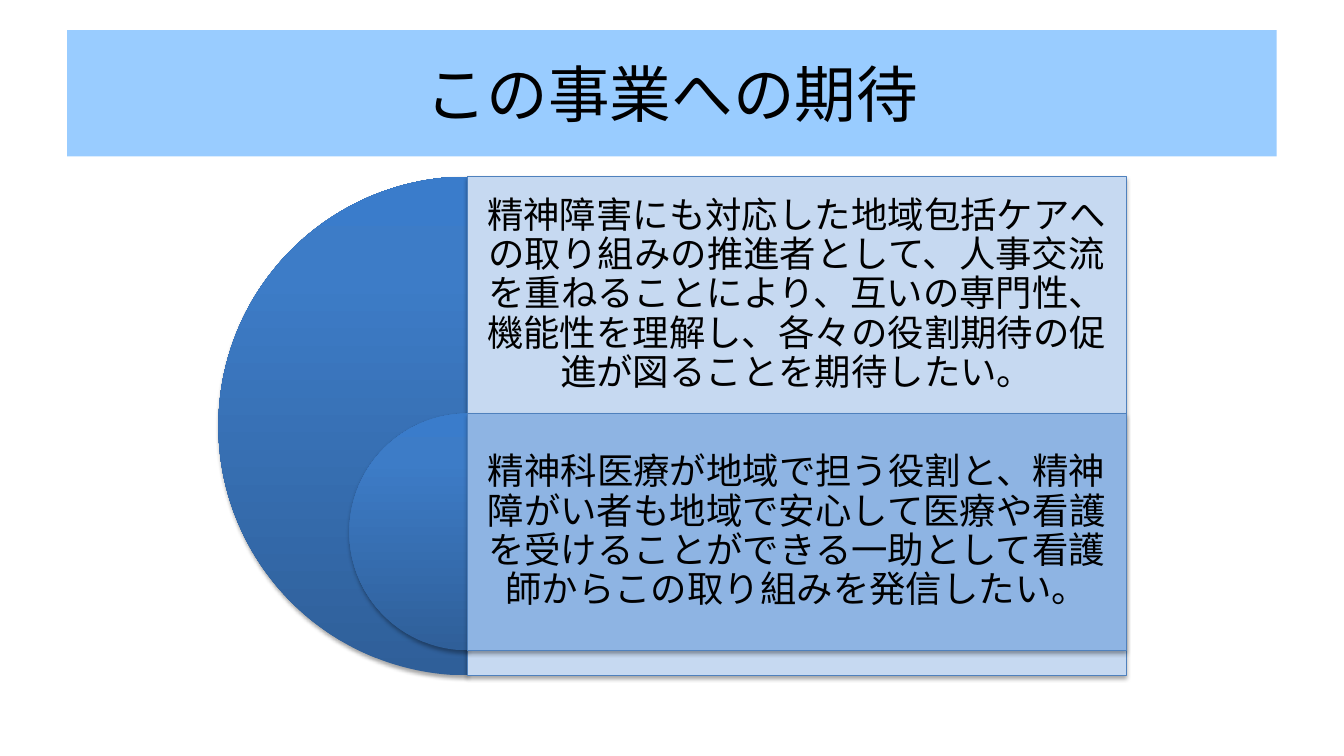
import copy

import lxml.etree
import pptx
import pptx.dml.color
import pptx.enum.shapes
import pptx.enum.text
import pptx.oxml.ns
import pptx.util

Cm = pptx.util.Cm
Pt = pptx.util.Pt
RGBColor = pptx.dml.color.RGBColor
MSO_SHAPE = pptx.enum.shapes.MSO_SHAPE
qn = pptx.oxml.ns.qn

BLACK = RGBColor(0x00, 0x00, 0x00)
TITLE_BLUE = RGBColor(0x99, 0xCC, 0xFF)
PALE_BLUE = RGBColor(0xC6, 0xD9, 0xF1)
MID_BLUE = RGBColor(0x8E, 0xB4, 0xE3)
EDGE_BLUE = RGBColor(0x4F, 0x81, 0xBD)
DISC_STOPS = [
    (0, RGBColor(0x2F, 0x5F, 0x99)),
    (0.8, RGBColor(0x3D, 0x7C, 0xC7)),
    (1, RGBColor(0x3A, 0x7C, 0xCB)),
]
FONT = "Noto Sans CJK JP"

TITLE = "この事業への期待"
# Diameter of the half disc (cm), panel colour, text
EXPECTATIONS = [
    (12.57, PALE_BLUE,
     "精神障害にも対応した地域包括ケアへの取り組みの推進者として、人事交流を重ねることにより、"
     "互いの専門性、機能性を理解し、各々の役割期待の促進が図ることを期待したい。"),
    (5.97, MID_BLUE,
     "精神科医療が地域で担う役割と、精神障がい者も地域で安心して医療や看護を受けることができる"
     "一助として看護師からこの取り組みを発信したい。"),
]

PANEL_LEFT, PANEL_WIDTH = 11.79, 16.59
FIRST_TOP, ROW_HEIGHT = 4.45, 5.97
TEXT_INSET = Cm(0.28)


def write_centred(frame, text, size):
    frame.word_wrap = True
    frame.vertical_anchor = pptx.enum.text.MSO_ANCHOR.MIDDLE
    para = frame.paragraphs[0]
    para.alignment = pptx.enum.text.PP_ALIGN.CENTER
    span = para.add_run()
    span.text = text
    span.font.size = Pt(size)
    span.font.color.rgb = BLACK
    span.font.name = FONT
    latin = span.font._element.find(qn("a:latin"))
    east_asian = lxml.etree.Element(qn("a:ea"), typeface=FONT)
    latin.addnext(east_asian)
    return para


def add_soft_shadow(shape):
    shape.shadow.inherit = False
    effects = shape._element.spPr.find(qn("a:effectLst"))
    shadow = lxml.etree.SubElement(
        effects, qn("a:outerShdw"), blurRad=str(Pt(3.1)), dist=str(Pt(1.8)),
        dir="5400000", rotWithShape="0")
    colour = lxml.etree.SubElement(shadow, qn("a:srgbClr"), val=str(BLACK))
    lxml.etree.SubElement(colour, qn("a:alpha"), val="35000")


def add_half_disc(page, top, diameter):
    disc = page.shapes.add_shape(
        MSO_SHAPE.PIE, Cm(PANEL_LEFT - diameter / 2), Cm(top),
        Cm(diameter), Cm(diameter))
    # Left half: from 90 to 270 degrees
    disc.adjustments[0] = 54
    disc.adjustments[1] = 162
    disc.line.fill.background()
    disc.fill.gradient()
    disc.fill.gradient_angle = 90
    stop_list = disc._element.spPr.find(qn("a:gradFill")).find(qn("a:gsLst"))
    stop_list.append(copy.deepcopy(stop_list[-1]))
    for stop, (position, colour) in zip(disc.fill.gradient_stops, DISC_STOPS):
        stop.position = position
        stop.color.rgb = colour
    add_soft_shadow(disc)


def add_panel(page, top, height, colour):
    panel = page.shapes.add_shape(
        MSO_SHAPE.RECTANGLE, Cm(PANEL_LEFT), Cm(top), Cm(PANEL_WIDTH), Cm(height))
    panel.fill.solid()
    panel.fill.fore_color.rgb = colour
    panel.line.color.rgb = EDGE_BLUE
    panel.line.width = Pt(0.75)
    add_soft_shadow(panel)


def add_panel_text(page, top, text):
    box = page.shapes.add_textbox(
        Cm(PANEL_LEFT), Cm(top), Cm(PANEL_WIDTH), Cm(ROW_HEIGHT))
    frame = box.text_frame
    frame.margin_left = frame.margin_right = TEXT_INSET
    frame.margin_top = frame.margin_bottom = TEXT_INSET
    write_centred(frame, text, 26).line_spacing = 0.9


def main():
    deck = pptx.Presentation()
    deck.slide_width, deck.slide_height = Cm(33.87), Cm(19.05)
    page = deck.slides.add_slide(deck.slide_layouts[5])

    title = page.shapes.title
    title.left, title.top = Cm(1.69), Cm(0.76)
    title.width, title.height = Cm(30.48), Cm(3.18)
    title.fill.solid()
    title.fill.fore_color.rgb = TITLE_BLUE
    write_centred(title.text_frame, TITLE, 44)

    for row, (diameter, colour, text) in enumerate(EXPECTATIONS):
        top = FIRST_TOP + row * ROW_HEIGHT
        add_half_disc(page, top, diameter)
        add_panel(page, top, diameter, colour)
        add_panel_text(page, top, text)

    deck.save("out.pptx")


if __name__ == "__main__":
    main()
